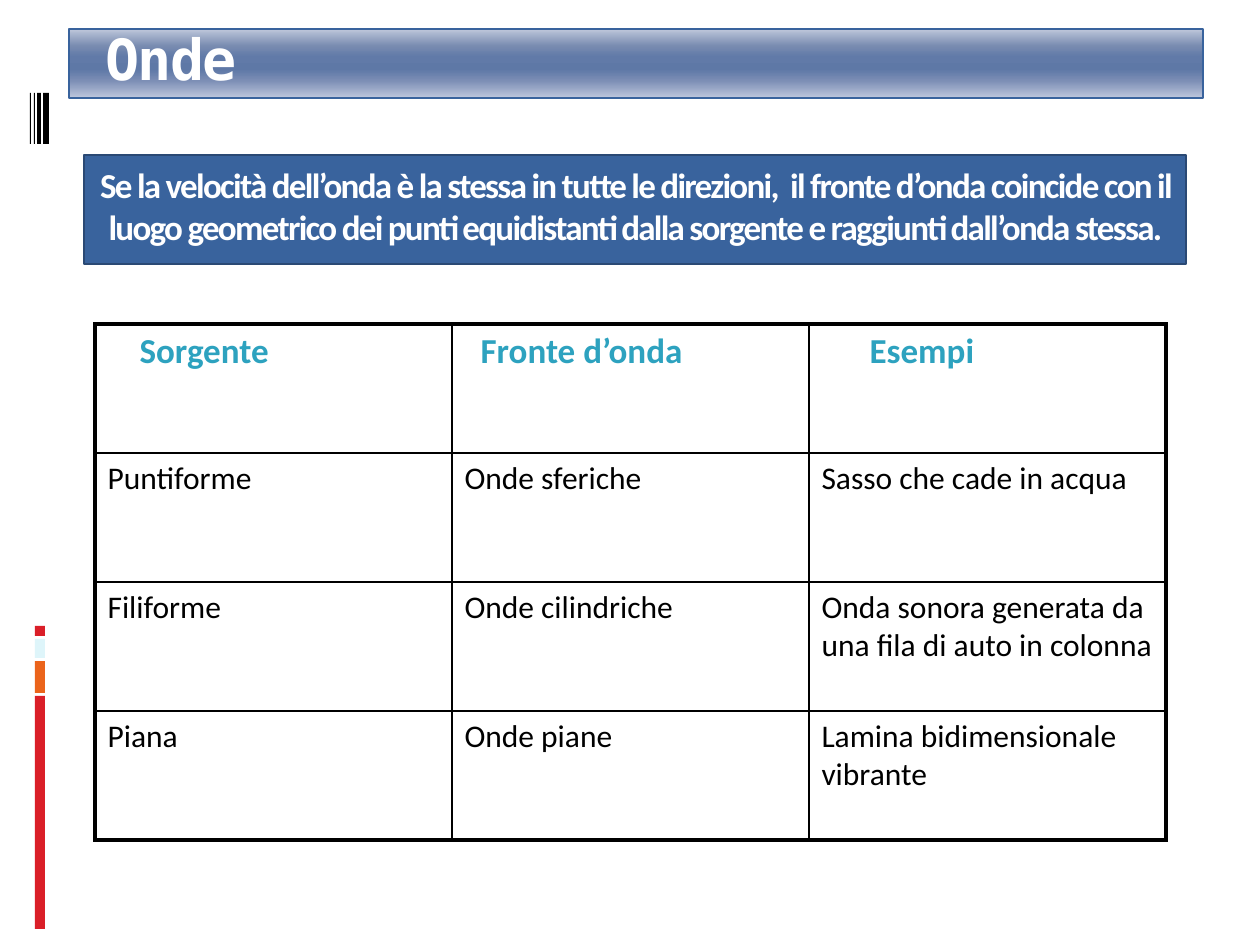
from lxml import etree
from pptx import Presentation
from pptx import util as u
from pptx.dml.color import RGBColor
from pptx.enum import shapes, text
from pptx.oxml.ns import qn

PX = 914400 / 126
BLUE, DARK_BLUE, TEAL = "39639D", "2A4974", "2DA2BF"
RED, ORANGE, PALE = "DA1F28", "EB641B", "DEF5FA"
WHITE, BLACK = "FFFFFF", "000000"

SIDE_BARS = [(696, 233, RED), (661, 32, ORANGE), (639, 19, PALE), (626, 10, RED)]
BARCODE = [(43, 6), (37, 4), (34, 1), (30, 1)]
TITLE_STOPS = [(0, "BEC7DB"), (25, "788BB0"), (40, "617AA8"), (50, "5E78A6"),
               (60, "617AA8"), (75, "7C8EB5"), (100, "BDC6DC")]
STATEMENT = ("Se la velocità dell’onda è la stessa in tutte le direzioni,  "
             "il fronte d’onda coincide con il luogo geometrico dei punti "
             "equidistanti dalla sorgente e raggiunti dall’onda stessa.")
WAVES = [
    ["Sorgente", "Fronte d’onda", "Esempi"],
    ["Puntiforme", "Onde sferiche", "Sasso che cade in acqua"],
    ["Filiforme", "Onde cilindriche", "Onda sonora generata da una fila di auto in colonna"],
    ["Piana", "Onde piane", "Lamina bidimensionale vibrante"],
]
HEADER_INDENTS = [32, 16, 48]


def px(n):
    return u.Emu(round(n * PX))


def rgb(color):
    return RGBColor.from_string(color)


class SlideBuilder:
    font = "Calibri"

    def __init__(self, prs):
        self.slide = prs.slides.add_slide(prs.slide_layouts[6])

    def rect(self, x, y, w, h, fill=None, line=None, line_pt=1.0):
        sp = self.slide.shapes.add_shape(
            shapes.MSO_SHAPE.RECTANGLE, px(x), px(y), px(w), px(h))
        sp.shadow.inherit = False
        if fill:
            sp.fill.solid()
            sp.fill.fore_color.rgb = rgb(fill)
        if line:
            sp.line.color.rgb = rgb(line)
            sp.line.width = u.Pt(line_pt)
        else:
            sp.line.fill.background()
        return sp

    def gradient(self, sp, stops):
        """Fill a shape from top to bottom through (percent, colour) stops."""
        sp.fill.gradient()
        sp.fill.gradient_angle = 270
        stop_list = sp._element.spPr.find(qn("a:gradFill")).find(qn("a:gsLst"))
        for old in list(stop_list):
            stop_list.remove(old)
        for percent, color in stops:
            stop = etree.SubElement(stop_list, qn("a:gs"), pos=str(percent * 1000))
            etree.SubElement(stop, qn("a:srgbClr"), val=color)

    def label(self, tf, words, size, color, bold=False, font=None,
              align=text.PP_ALIGN.LEFT, indent=0, spacing=0):
        """Fill the first paragraph; spacing is between letters, in points."""
        tf.word_wrap = True
        p = tf.paragraphs[0]
        p.alignment = align
        if indent:
            p._p.get_or_add_pPr().set("marL", str(px(indent)))
        r = p.add_run()
        r.text = words
        if spacing:
            r._r.get_or_add_rPr().set("spc", str(spacing * 100))
        p.font.name = font or self.font
        p.font.size = u.Pt(size)
        p.font.bold = bold
        p.font.color.rgb = rgb(color)
        return p

    def border(self, cell, side, width):
        ln = etree.SubElement(cell._tc.get_or_add_tcPr(), qn("a:ln" + side),
                              w=str(u.Pt(width)))
        fill = etree.SubElement(ln, qn("a:solidFill"))
        etree.SubElement(fill, qn("a:srgbClr"), val=BLACK)

    def table(self, x, y, col_w, row_h, rows, indents, inner=1, outer=2.25):
        n_rows, n_cols = len(rows), len(rows[0])
        tbl = self.slide.shapes.add_table(
            n_rows, n_cols, px(x), px(y), px(col_w * n_cols), px(row_h * n_rows)).table
        tbl.first_row = tbl.horz_banding = False
        for i, row in enumerate(rows):
            for j, words in enumerate(row):
                cell = tbl.cell(i, j)
                edges = {"L": j == 0, "R": j == n_cols - 1,
                         "T": i == 0, "B": i == n_rows - 1}
                for side, is_outer in edges.items():
                    self.border(cell, side, outer if is_outer else inner)
                cell.fill.background()
                if i == 0:
                    self.label(cell.text_frame, words, 20, TEAL, bold=True,
                               indent=indents[j])
                else:
                    self.label(cell.text_frame, words, 18, BLACK)


def main():
    prs = Presentation()
    prs.slide_width, prs.slide_height = u.Inches(10), u.Inches(7.5)
    s = SlideBuilder(prs)

    for y, h, color in SIDE_BARS:
        s.rect(35, y, 10, h, color)
    for x, w in BARCODE:
        s.rect(x, 93, w, 51, BLACK)

    title = s.rect(69, 29, 1134, 69, line=BLUE, line_pt=0.94)
    s.gradient(title, TITLE_STOPS)
    title.text_frame.vertical_anchor = text.MSO_ANCHOR.BOTTOM
    p = s.label(title.text_frame, "Onde", 32.4, WHITE, bold=True,
                font="DejaVu Sans Mono", indent=24, spacing=-1)
    p.line_spacing = 0.8

    banner = s.rect(84, 155, 1102, 109, BLUE, DARK_BLUE, 1.5)
    banner.text_frame.vertical_anchor = text.MSO_ANCHOR.TOP
    banner.text_frame.margin_top = px(8)
    s.label(banner.text_frame, STATEMENT, 20, WHITE, bold=True,
            align=text.PP_ALIGN.CENTER, spacing=-1)

    s.table(95, 324, 357, 129, WAVES, HEADER_INDENTS)
    prs.save("out.pptx")


if __name__ == "__main__":
    main()
